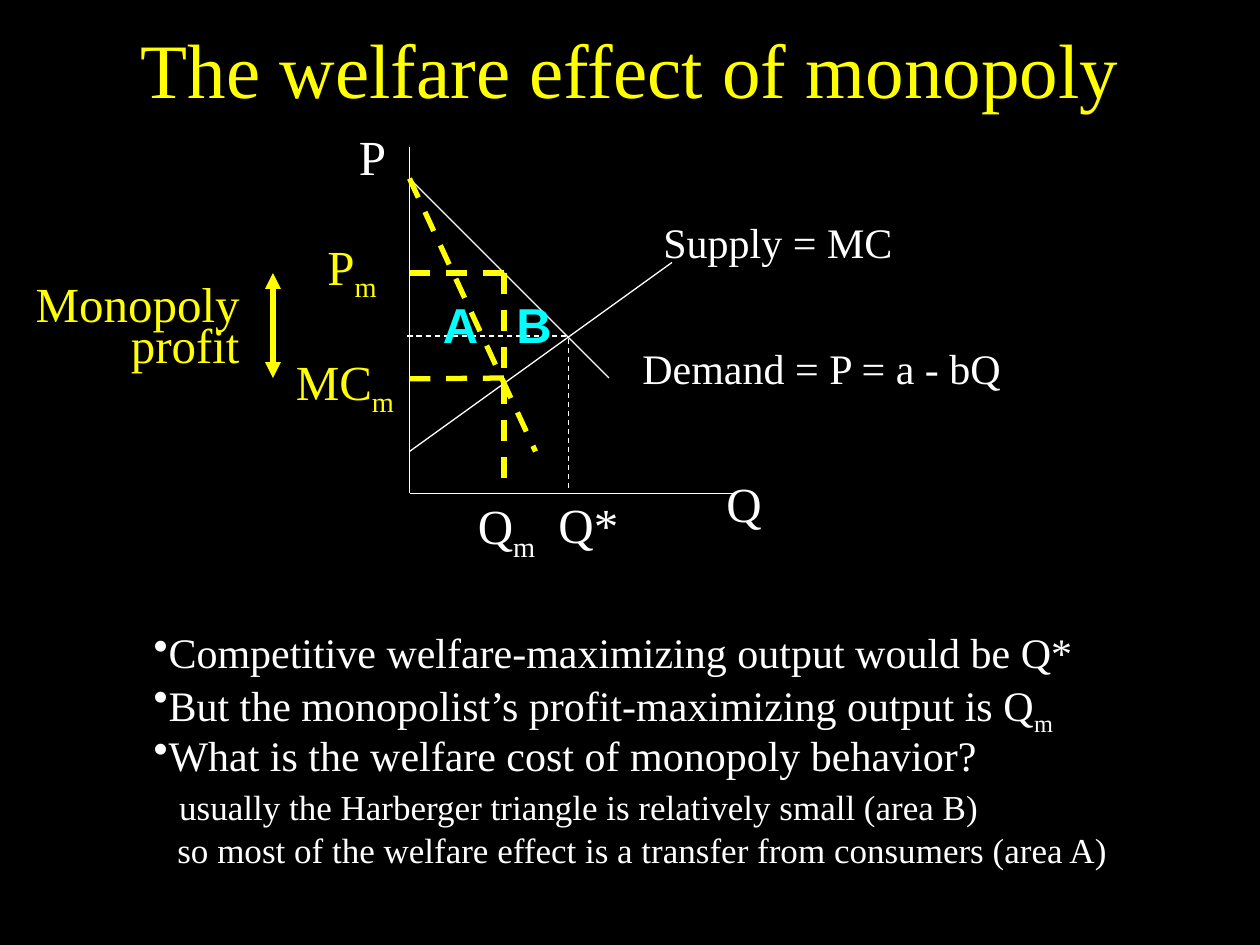
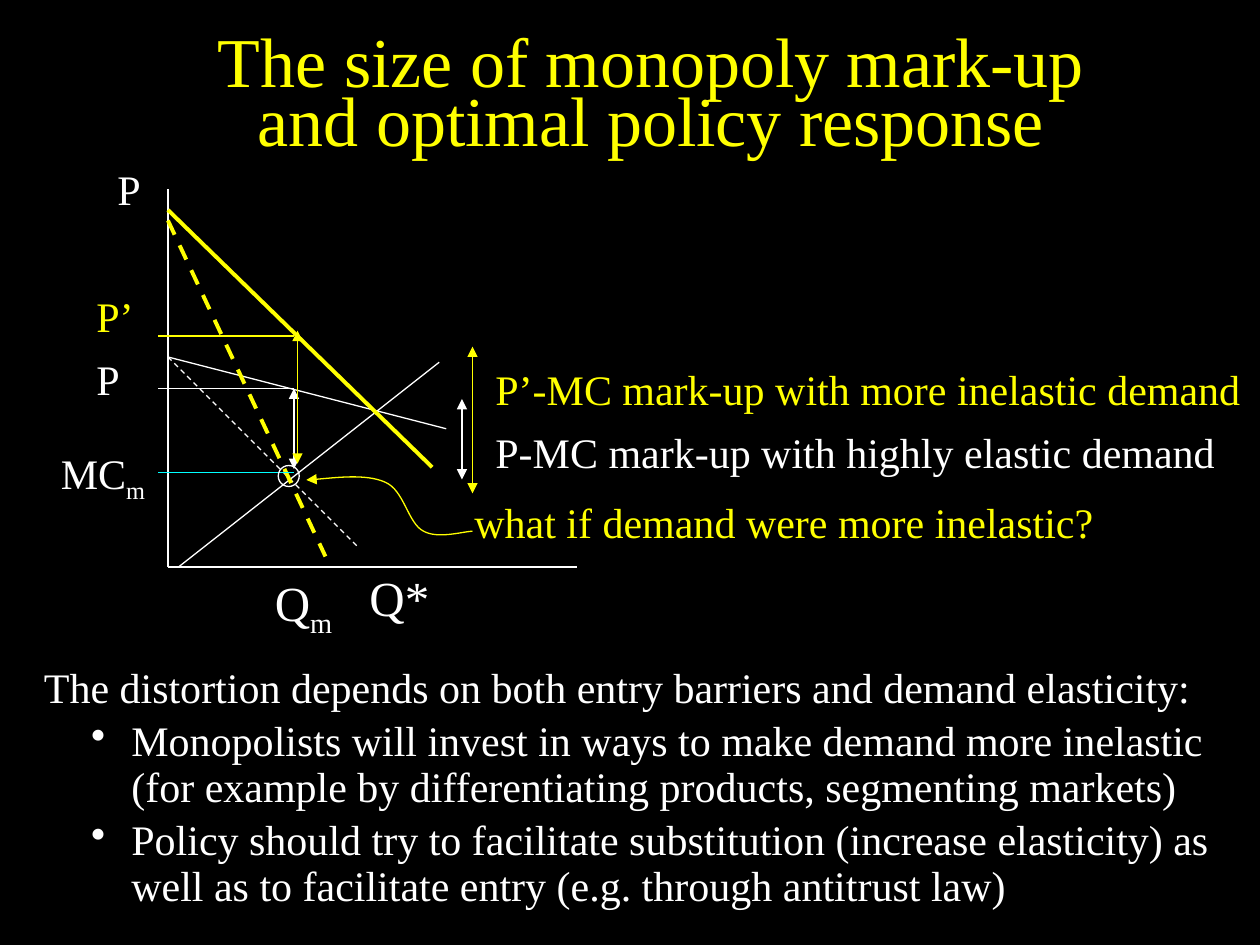
"""Build two slides on the welfare effect and the mark-up of a monopoly."""
import dataclasses
import itertools

import pptx
import pptx.dml.color
import pptx.enum.dml
import pptx.enum.shapes
import pptx.enum.text
import pptx.oxml
import pptx.oxml.ns
import pptx.util

Pt = pptx.util.Pt
qn = pptx.oxml.ns.qn
ALIGN = pptx.enum.text.PP_ALIGN
AUTO_SIZE = pptx.enum.text.MSO_AUTO_SIZE
BLACK, WHITE, YELLOW, CYAN = "000000", "FFFFFF", "FFFF00", "00FFFF"
SERIF, SANS = "Times New Roman", "Arial"
THIN, MEDIUM, THICK = 0.75, 2.25, 3
TITLE_ONLY = 5


@dataclasses.dataclass(frozen=True)
class Run:
    text: str
    size: float = 24
    sub: bool = False


@dataclasses.dataclass(frozen=True)
class Para:
    runs: tuple[Run, ...]
    level: int = 0
    left: float = 0
    indent: float = 0
    bullet: bool = False


@dataclasses.dataclass(frozen=True)
class Label:
    runs: tuple[Run, ...]
    box: tuple[float, float, float, float]
    color: str = WHITE
    spacing: float = 1
    wrap: bool = True
    align: ALIGN = ALIGN.LEFT
    font: str = SERIF
    bold: bool = False


@dataclasses.dataclass(frozen=True)
class Line:
    start: tuple[float, float]
    end: tuple[float, float]
    color: str = WHITE
    width: float = THIN
    dashed: bool = False
    arrows: bool = False


def rgb(color: str) -> pptx.dml.color.RGBColor:
    return pptx.dml.color.RGBColor.from_string(color)


def pts(*lengths: float) -> list[pptx.util.Length]:
    return [Pt(length) for length in lengths]


def add_run(p, run: Run, color: str, font: str = SERIF, bold: bool = False) -> None:
    r = p.add_run()
    r.text = run.text
    r.font.name, r.font.size, r.font.bold = font, Pt(run.size), bold
    r.font.color.rgb = rgb(color)
    if run.sub:
        r._r.get_or_add_rPr().set("baseline", "-25000")


def style_line(line, color: str, width: float, ends: tuple[str, ...] = ()) -> None:
    line.color.rgb = rgb(color)
    line.width = Pt(width)
    for end in ends:
        line._get_or_add_ln().append(
            pptx.oxml.parse_xml(f'<a:{end} {pptx.oxml.ns.nsdecls("a")} type="triangle"/>'))


def add_line(s, line: Line) -> None:
    sp = s.shapes.add_connector(pptx.enum.shapes.MSO_CONNECTOR.STRAIGHT, *pts(*line.start, *line.end))
    if line.dashed:
        sp.line.dash_style = pptx.enum.dml.MSO_LINE.DASH
    style_line(sp.line, line.color, line.width, ("headEnd", "tailEnd") if line.arrows else ())
    sp._element.spPr.append(pptx.oxml.parse_xml(f'<a:effectLst {pptx.oxml.ns.nsdecls("a")}/>'))


def add_frame(s, box: tuple[float, ...], wrap: bool = True):
    tf = s.shapes.add_textbox(*pts(*box)).text_frame
    tf.word_wrap = wrap
    tf.auto_size = AUTO_SIZE.SHAPE_TO_FIT_TEXT
    return tf


def add_label(s, label: Label) -> None:
    p = add_frame(s, label.box, label.wrap).paragraphs[0]
    p.alignment, p.line_spacing = label.align, label.spacing
    for run in label.runs:
        add_run(p, run, label.color, label.font, label.bold)


def add_body(s, box: tuple[float, ...], spacing: float, paras: list[Para]) -> None:
    tf = add_frame(s, box)
    for i, para in enumerate(paras):
        p = tf.add_paragraph() if i else tf.paragraphs[0]
        p.level, p.line_spacing, p.space_before = para.level, spacing, Pt(4.8)
        pPr = p._p.get_or_add_pPr()
        pPr.set("marL", str(Pt(para.left)))
        pPr.set("indent", str(Pt(para.indent)))
        if para.bullet:
            pPr.append(pptx.oxml.parse_xml(f'<a:buChar {pptx.oxml.ns.nsdecls("a")} char="•"/>'))
        for run in para.runs:
            add_run(p, run, WHITE)


def add_curve(s, start: tuple[float, float], points: list[tuple[float, float]], color: str) -> None:
    builder = s.shapes.build_freeform(*pts(*start))
    builder.add_line_segments([tuple(pts(*point)) for point in points], close=False)
    sp = builder.convert_to_shape()
    sp.shadow.inherit = False
    sp.fill.background()
    style_line(sp.line, color, THIN, ("headEnd",))
    segments = list(sp._element.iter(qn("a:lnTo")))
    for first, second, third in zip(*[iter(segments)] * 3):
        bezier = pptx.oxml.parse_xml(f'<a:cubicBezTo {pptx.oxml.ns.nsdecls("a")}/>')
        first.addprevious(bezier)
        for segment in (first, second, third):
            bezier.append(segment[0])
            segment.getparent().remove(segment)


def add_slide(prs, title: str, size: float, box: tuple[float, ...]):
    s = prs.slides.add_slide(prs.slide_layouts[TITLE_ONLY])
    sp = s.shapes.title
    sp.left, sp.top, sp.width, sp.height = pts(*box)
    tf = sp.text_frame
    tf.word_wrap, tf.auto_size = True, AUTO_SIZE.NONE
    tf.vertical_anchor = pptx.enum.text.MSO_ANCHOR.MIDDLE
    p = tf.paragraphs[0]
    p.alignment, p.line_spacing = ALIGN.CENTER, 0.7
    add_run(p, Run(title, size), YELLOW)
    return s


def symbol(name: str, x: float, y: float, width: float, color: str = WHITE, sub: str = "") -> Label:
    runs = (Run(name, 28),) + ((Run(sub, 28, True),) if sub else ())
    return Label(runs, (x, y, width, 31), color, 0.7, wrap=False)


def area(name: str, x: float) -> Label:
    return Label((Run(name, 28),), (x, 174, 36, 31), CYAN, 0.7, font=SANS, bold=True)


def text(words: str, x: float, y: float, width: float, color: str = WHITE, spacing: float = 1) -> Label:
    return Label((Run(words),), (x, y, width, 36 if spacing == 1 else 30), color, spacing)


def add_welfare_slide(prs) -> None:
    s = add_slide(prs, "The welfare effect of monopoly", 44, (0, 0, 720, 90))
    axis_x, axis_y, q_m, p_m, mc_m = 234, 282, 288, 156, 216
    for line in (
        Line((axis_x, 84), (axis_x, axis_y)),
        Line((axis_x, axis_y), (420, axis_y)),
        Line((axis_x, 258), (384, 150)),
        Line((axis_x, 102), (348, 216)),
        Line((axis_x, 102), (306, 258), YELLOW, THICK, True),
        Line((325, 193.5), (325, 281), dashed=True),
        Line((323.5, 192), (232, 192), dashed=True),
        Line((q_m, p_m), (q_m, 279), YELLOW, THICK, True),
        Line((q_m, mc_m), (axis_x, mc_m + 0.5), YELLOW, THICK, True),
        Line((q_m, p_m), (axis_x, p_m), YELLOW, THICK, True),
        Line((156, mc_m), (156, p_m), YELLOW, THICK, arrows=True),
    ):
        add_line(s, line)
    for label in (
        symbol("P", 198, 78, 30),
        text("Supply = MC", 372, 120, 204),
        text("Demand = P = a - bQ", 360, 192, 276),
        symbol("Q", 408, 276, 34.5),
        symbol("Q*", 312, 288, 49),
        symbol("Q", 266, 286.5, 49.5, sub="m"),
        symbol("MC", 162, 204, 72.5, YELLOW, "m"),
        symbol("P", 180, 138, 44.5, YELLOW, "m"),
        Label((Run("Monopoly profit", 28),), (0, 162, 144, 54), YELLOW, 0.7, align=ALIGN.RIGHT),
        area("A", 246),
        area("B", 288),
    ):
        add_label(s, label)
    points = (
        (Run("Competitive welfare-maximizing output would be Q*"),),
        (Run("But the monopolist’s profit-maximizing output is Q"), Run("m", sub=True)),
        (Run("What is the welfare cost of monopoly behavior?"),),
    )
    details = (
        (Run(" "), Run("usually the Harberger triangle is relatively small (area B)", 20)),
        (Run(" so most of the welfare effect is a transfer from consumers (area A)", 20),),
    )
    add_body(s, (54, 360, 600, 140), 0.8, list(itertools.chain(
        (Para(runs, left=0.75, indent=26, bullet=True) for runs in points),
        (Para(runs, 1, left=35.25) for runs in details))))


def add_markup_slide(prs) -> None:
    s = add_slide(prs, "The size of monopoly mark-up and optimal policy response", 40, (96, 12, 552, 90))
    axis_x, axis_y, q_m, tick_x = 96, 324, 168, 90
    for line in (
        Line((axis_x, 108), (axis_x, axis_y)),
        Line((axis_x, axis_y), (330, axis_y)),
        Line((102, axis_y), (251, 207)),
        Line((axis_x, 204), (255, 245)),
        Line((axis_x, 204), (204, 312), dashed=True),
        Line((q_m, 268), (q_m, 222), arrows=True),
        Line((axis_x, 120), (247, 267), YELLOW, MEDIUM),
        Line((axis_x, 126), (186, 318), YELLOW, MEDIUM, True),
        Line((170, 265), (170, 189), YELLOW, arrows=True),
        Line((q_m, 270), (tick_x, 270), CYAN),
        Line((q_m, 222), (tick_x, 222)),
        Line((q_m, 192), (tick_x, 192), YELLOW),
        Line((264, 274), (264, 228), arrows=True),
        Line((270, 282), (270, 198), YELLOW, arrows=True),
    ):
        add_line(s, line)
    sp = s.shapes.add_shape(pptx.enum.shapes.MSO_SHAPE.OVAL, *pts(159, 266, 12, 12))
    sp.shadow.inherit = False
    sp.fill.background()
    style_line(sp.line, WHITE, THIN)
    add_curve(s, (175, 274.25), [
        (182, 274), (209, 270.5), (220, 275.5),
        (231, 280), (233, 299), (242, 303.5),
        (250, 308), (263.5, 304), (270, 303.5)], YELLOW)
    for label in (
        text("P", 60, 90, 42),
        Label((Run("MC"), Run("m", sub=True)), (18, 252, 72, 36), align=ALIGN.RIGHT),
        text("P", 48, 204, 42, spacing=0.8),
        text("P’", 48, 168, 42, YELLOW, 0.8),
        text("P-MC mark-up with highly elastic demand", 276, 240, 432),
        text("P’-MC mark-up with more inelastic demand", 276, 204, 468, YELLOW),
        text("what if demand were more inelastic?", 264, 288, 414, YELLOW, 0.7),
        symbol("Q*", 204, 330, 49),
        symbol("Q", 150, 330, 49.5, sub="m"),
    ):
        add_label(s, label)
    points = (
        "Monopolists will invest in ways to make demand more inelastic "
        "(for example by differentiating products, segmenting markets)",
        "Policy should try to facilitate substitution (increase elasticity) as well as "
        "to facilitate entry (e.g. through antitrust law)",
    )
    add_body(s, (18, 377.5, 702, 148), 0.9, [
        Para((Run("The distortion depends on both entry barriers and demand elasticity:"),)),
        *(Para((Run(point),), 1, 50, -23, True) for point in points)])


def main() -> None:
    prs = pptx.Presentation()
    prs.slide_width, prs.slide_height = pts(720, 540)
    fill = prs.slide_master.background.fill
    fill.solid()
    fill.fore_color.rgb = rgb(BLACK)
    add_welfare_slide(prs)
    add_markup_slide(prs)
    prs.save("out.pptx")


if __name__ == "__main__":
    main()
